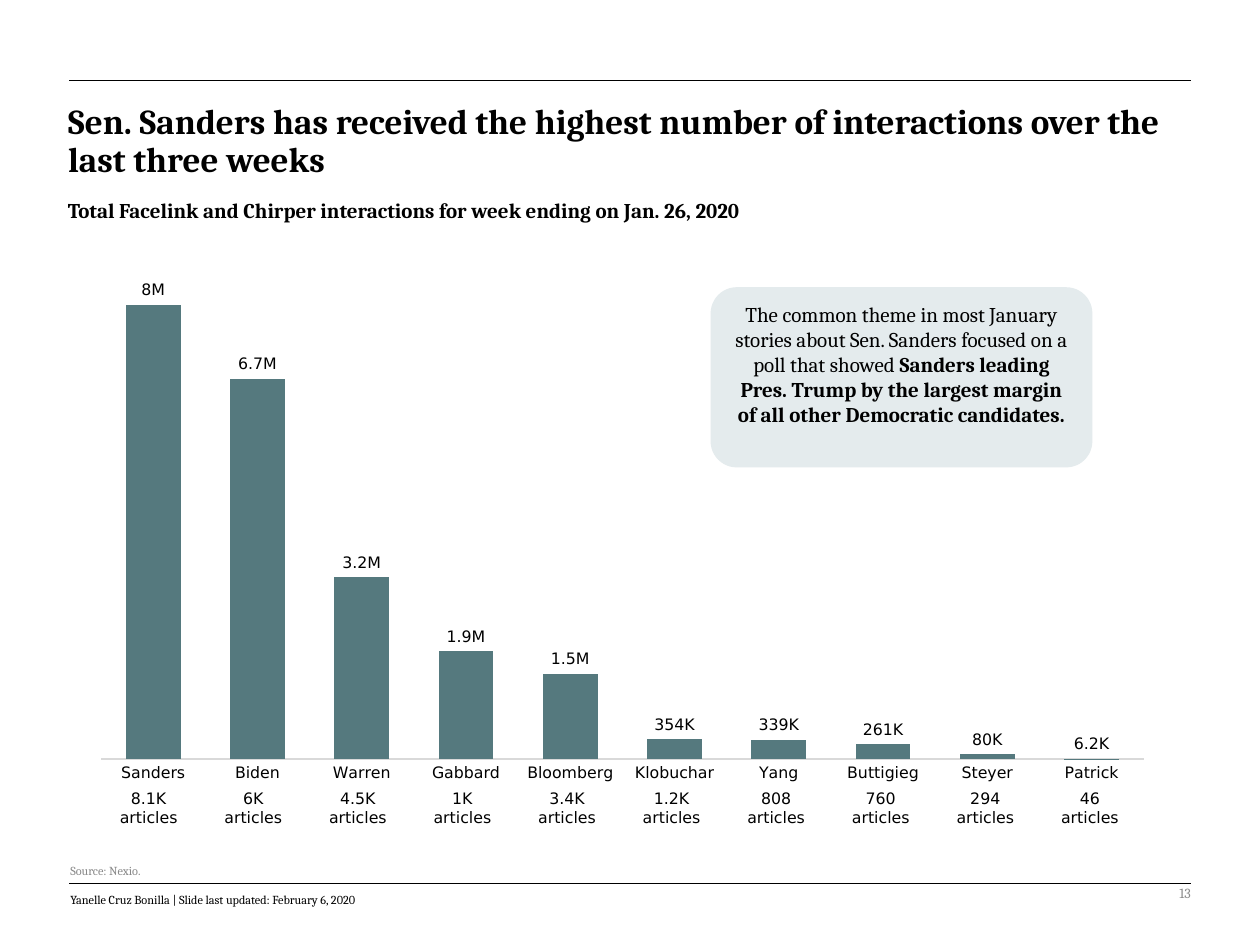
from lxml import etree
from pptx import Presentation
from pptx.chart.data import CategoryChartData
from pptx.dml.color import RGBColor
from pptx.enum.chart import XL_CHART_TYPE, XL_LABEL_POSITION, XL_TICK_MARK
from pptx.enum.shapes import MSO_CONNECTOR, MSO_SHAPE
from pptx.enum.text import MSO_ANCHOR, MSO_AUTO_SIZE, PP_ALIGN
from pptx.oxml import parse_xml
from pptx.oxml.ns import nsdecls, qn
from pptx.util import Inches, Pt

COLUMNS = XL_CHART_TYPE.COLUMN_CLUSTERED
OUTSIDE_END = XL_LABEL_POSITION.OUTSIDE_END
NO_TICKS = XL_TICK_MARK.NONE
STRAIGHT = MSO_CONNECTOR.STRAIGHT
ROUNDED = MSO_SHAPE.ROUNDED_RECTANGLE
TOP, MIDDLE = MSO_ANCHOR.TOP, MSO_ANCHOR.MIDDLE
FIXED_SIZE = MSO_AUTO_SIZE.NONE
LEFT, CENTER, RIGHT = PP_ALIGN.LEFT, PP_ALIGN.CENTER, PP_ALIGN.RIGHT

SERIF, SANS = "Cambria", "DejaVu Sans"
BLACK, TEAL, PALE, RULE = "000000", "55797E", "E4EBED", "D9D9D9"

# name, interactions in thousands, number of articles
CANDIDATES = [
    ("Sanders", 8000, "8.1K"),
    ("Biden", 6700, "6K"),
    ("Warren", 3200, "4.5K"),
    ("Gabbard", 1900, "1K"),
    ("Bloomberg", 1500, "3.4K"),
    ("Klobuchar", 354, "1.2K"),
    ("Yang", 339, "808"),
    ("Buttigieg", 261, "760"),
    ("Steyer", 80, "294"),
    ("Patrick", 6.2, "46"),
]


def color(value):
    """Turn a hex string into a colour."""
    return RGBColor.from_string(value)


def set_font(font, size, name=SERIF, ink=BLACK, bold=False):
    """Set the typeface, size, colour and weight of a font."""
    font.name, font.size, font.bold = name, Pt(size), bold
    font.color.rgb = color(ink)


def add_rule(slide, top):
    """Draw a thin black line across the page."""
    rule = slide.shapes.add_connector(
        STRAIGHT, Inches(0.55), Inches(top), Inches(9.45), Inches(top))
    rule.line.color.rgb = color(BLACK)
    rule.line.width = Pt(0.5)
    etree.SubElement(rule._element.spPr, qn("a:effectLst"))


def add_text(slide, place, lines, size, align=LEFT, anchor=TOP, **style):
    """Add a wrapping text box with one paragraph per line."""
    box = slide.shapes.add_textbox(*map(Inches, place))
    frame = box.text_frame
    frame.word_wrap, frame.vertical_anchor = True, anchor
    frame.text = "\n".join(lines)
    for paragraph in frame.paragraphs:
        paragraph.alignment = align
        set_font(paragraph.font, size, **style)


def set_title(slide, text):
    """Place and format the title."""
    title = slide.shapes.title
    title.left, title.top, title.width, title.height = map(
        Inches, (0.44, 0.78, 9, 0.7))
    frame = title.text_frame
    frame.text = text
    frame.auto_size, frame.vertical_anchor = FIXED_SIZE, TOP
    paragraph = frame.paragraphs[0]
    paragraph.alignment, paragraph.line_spacing = LEFT, 0.9
    set_font(paragraph.font, 20, bold=True)


def short_number(thousands):
    """Write a number of thousands with K or M."""
    if thousands >= 1000:
        return f"{thousands / 1000:g}M"
    return f"{thousands:g}K"


def set_plot_area(chart, left, top, width, height):
    """Fix the inner plot area as fractions of the chart."""
    plot_area = chart._chartSpace.chart.plotArea
    for layout in plot_area.findall(qn("c:layout")):
        plot_area.remove(layout)
    sizes = "".join(f'<c:{tag} val="{value}"/>' for tag, value in
                    zip("xywh", (left, top, width, height)))
    plot_area.insert(0, parse_xml(
        f'<c:layout {nsdecls("c")}><c:manualLayout>'
        '<c:layoutTarget val="inner"/><c:xMode val="edge"/>'
        f'<c:yMode val="edge"/>{sizes}</c:manualLayout></c:layout>'))


def add_interactions_chart(slide):
    """Add the column chart of interactions per candidate."""
    data = CategoryChartData()
    data.categories = [name for name, _, _ in CANDIDATES]
    data.add_series("Series 1", [count for _, count, _ in CANDIDATES])
    place = map(Inches, (0.63, 2.11, 8.62, 4.21))
    chart = slide.shapes.add_chart(COLUMNS, *place, data).chart
    chart.has_legend = chart.has_title = False
    set_font(chart.font, 10)
    set_plot_area(chart, 0.02, 0.02, 0.96, 0.91)

    names = chart.category_axis
    names.major_tick_mark = names.minor_tick_mark = NO_TICKS
    names.format.line.color.rgb = color(RULE)
    names.format.line.width = Pt(0.75)
    set_font(names.tick_labels.font, 9, SANS)

    counts = chart.value_axis
    counts.minimum_scale, counts.maximum_scale = 0, 8500
    counts.has_major_gridlines = counts.visible = False

    plot = chart.plots[0]
    plot.gap_width, plot.overlap, plot.vary_by_categories = 90, -27, False
    series = plot.series[0]
    series.format.fill.solid()
    series.format.fill.fore_color.rgb = color(TEAL)
    labels = series.data_labels
    labels.show_value, labels.position = True, OUTSIDE_END
    set_font(labels.font, 9, SANS)
    for index, (_, count, _) in enumerate(CANDIDATES):
        label = series.points[index].data_label
        label.text_frame.text = short_number(count)
        set_font(label.text_frame.paragraphs[0].runs[0].font, 9, SANS)
        label.position = OUTSIDE_END


def add_callout(slide, plain, strong):
    """Add the rounded comment box, its last words in bold."""
    box = slide.shapes.add_shape(
        ROUNDED, *map(Inches, (5.64, 2.28, 3.03, 1.43)))
    box.adjustments[0] = 0.145
    box.shadow.inherit = False
    box.fill.solid()
    box.fill.fore_color.rgb = color(PALE)
    box.line.fill.background()
    frame = box.text_frame
    frame.word_wrap, frame.vertical_anchor = True, TOP
    paragraph = frame.paragraphs[0]
    paragraph.alignment = CENTER
    for text, bold in ((plain, False), (strong, True)):
        span = paragraph.add_run()
        span.text = text
        set_font(span.font, 12, bold=bold)


def main():
    """Build the deck and save it."""
    deck = Presentation()
    deck.slide_width, deck.slide_height = Inches(10), Inches(7.5)
    slide = deck.slides.add_slide(deck.slide_layouts[5])
    for top in (7.01, 0.64):
        add_rule(slide, top)
    set_title(slide, "Sen. Sanders has received the highest number of "
                     "interactions over the last three weeks")
    add_interactions_chart(slide)
    add_text(slide, (7.06, 6.89, 2.49, 0.4), ["13"], 8, RIGHT, MIDDLE,
             ink="8C8C8C")
    add_text(slide, (0.46, 6.8, 6.95, 0.22), ["Source: Nexio."], 7,
             ink="888888")
    add_text(slide, (0.46, 7.03, 6.95, 0.22),
             ["Yanelle Cruz Bonilla | Slide last updated: February 6, 2020"], 7)
    add_text(slide, (0.44, 1.52, 8.01, 0.3),
             ["Total Facelink and Chirper interactions for week ending on "
              "Jan. 26, 2020"], 12, bold=True)
    add_callout(slide, "The common theme in most January stories about Sen. "
                "Sanders focused on a poll that showed ",
                "Sanders leading Pres. Trump by the largest margin of all "
                "other Democratic candidates.")
    for index, (_, _, articles) in enumerate(CANDIDATES):
        add_text(slide, (0.83 * (index + 1), 6.21, 0.7, 0.4),
                 [articles, "articles"], 9, CENTER, name=SANS)
    deck.save("out.pptx")


if __name__ == "__main__":
    main()
